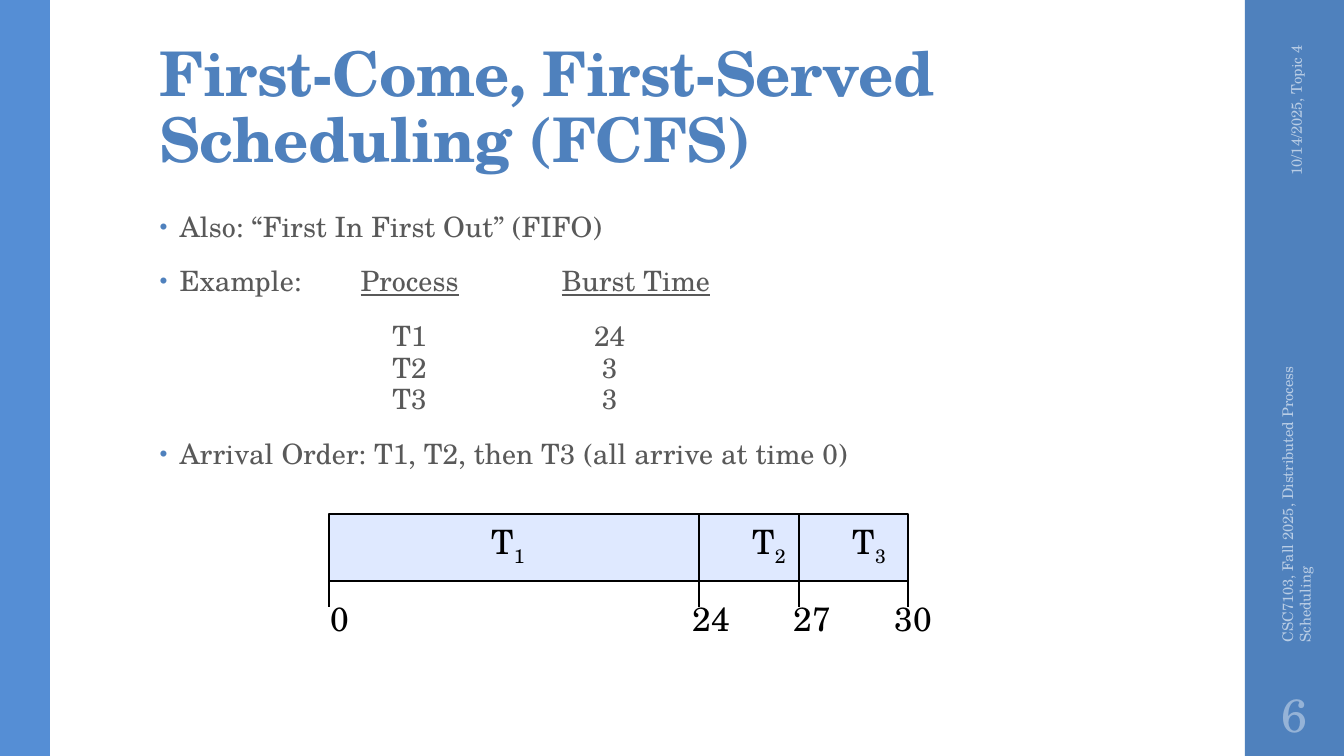
from lxml.etree import SubElement
from pptx import Presentation
from pptx.dml.color import RGBColor
from pptx.enum.shapes import MSO_CONNECTOR as Connector, MSO_SHAPE as Shape
from pptx.enum.text import MSO_ANCHOR as Anchor, PP_ALIGN as Align
from pptx.oxml import parse_xml
from pptx.oxml.ns import nsdecls, qn
from pptx.util import Pt

PX = 4578
FONT = "TeX Gyre Schola"
BLUE = "4F81BD"
BLACK = "000000"
GRAY = "595959"
PALE = "B9CDE5"


def color(value):
    return RGBColor.from_string(value)


def px(*lengths):
    return [length * PX for length in lengths]


def add_rectangle(slide, box, fill, line=None):
    shape = slide.shapes.add_shape(Shape.RECTANGLE, *px(*box))
    shape.shadow.inherit = False
    shape.fill.solid()
    shape.fill.fore_color.rgb = color(fill)
    if line:
        shape.line.color.rgb = color(line)
        shape.line.width = Pt(0.75)
    else:
        shape.line.fill.background()


def add_line(slide, x, top, bottom):
    connector = slide.shapes.add_connector(Connector.STRAIGHT, *px(x, top, x, bottom))
    connector.line.color.rgb = color(BLACK)
    connector.line.width = Pt(0.75)
    SubElement(connector._element.spPr, qn("a:effectLst"))


def add_frame(slide, box, anchor=Anchor.MIDDLE, wrap=True, rotation=0):
    shape = slide.shapes.add_textbox(*px(*box))
    shape.rotation = rotation
    frame = shape.text_frame
    frame.word_wrap = wrap
    frame.vertical_anchor = anchor
    return frame


def style(paragraph, size, ink, bold=False, align=Align.LEFT, spacing=0):
    font = paragraph.font
    font.name = FONT
    font.size = Pt(size)
    font.bold = bold
    font.color.rgb = color(ink)
    paragraph.alignment = align
    properties = paragraph._p.get_or_add_pPr().get_or_add_defRPr()
    properties.set("spc", str(spacing))


def add_text(slide, box, text, size, ink, align=Align.LEFT, **options):
    frame = add_frame(slide, box, **options)
    paragraph = frame.paragraphs[0]
    paragraph.text = text
    style(paragraph, size, ink, align=align)
    return frame


def add_before_font(paragraph, *fragments):
    font_properties = paragraph._p.pPr.find(qn("a:defRPr"))
    for tag, content in fragments:
        font_properties.addprevious(
            parse_xml(f"<a:{tag} {nsdecls('a')} {content}"))


def add_bullet(paragraph):
    properties = paragraph._p.pPr
    properties.set("marL", str(20 * PX))
    properties.set("indent", str(-20 * PX))
    add_before_font(
        paragraph,
        ("buClr", f'><a:srgbClr val="{BLUE}"/></a:buClr>'),
        ("buSzPct", 'val="80000"/>'),
        ("buFont", 'typeface="Arial"/>'),
        ("buChar", 'char="•"/>'))


def add_tabs(paragraph, kind, *positions):
    stops = "".join(f'<a:tab pos="{x * PX}" algn="{kind}"/>' for x in positions)
    add_before_font(paragraph, ("tabLst", f">{stops}</a:tabLst>"))


def add_side_bars(slide, width, height):
    add_rectangle(slide, (width - 99, 0, 99, height), BLUE)
    add_rectangle(slide, (0, 0, 50, height), "558ED5")


def add_title(slide, box):
    frame = add_frame(slide, box, anchor=Anchor.BOTTOM)
    frame.margin_top = 6 * PX
    paragraph = frame.paragraphs[0]
    paragraph.text = "First-Come, First-Served Scheduling (FCFS)"
    paragraph.line_spacing = 0.9
    style(paragraph, 22.2, BLUE, bold=True, spacing=-25)


def add_body(slide, box):
    frame = add_frame(slide, box, anchor=Anchor.TOP)
    processes = [("T1", 24), ("T2", 3), ("T3", 3)]
    rows = "\v".join(f"\t{name}\t{burst}" for name, burst in processes)
    texts = ["Also: “First In First Out” (FIFO)", "", rows,
             "Arrival Order: T1, T2, then T3 (all arrive at time 0)"]
    paragraphs = [frame.paragraphs[0]] + [frame.add_paragraph() for _ in texts[1:]]
    for paragraph, text in zip(paragraphs, texts):
        paragraph.text = text
        paragraph.line_spacing = 0.95
        paragraph.space_before = Pt(7.1)
        paragraph.space_after = Pt(1)
        style(paragraph, 10.1, GRAY, spacing=5)
        if text != rows:
            add_bullet(paragraph)

    example, table = paragraphs[1:3]
    for text, underline in [("Example:\t", False), ("Process", True),
                            ("\t", False), ("Burst Time", True)]:
        run = example.add_run()
        run.text = text
        run.font.underline = underline
    add_tabs(example, "l", 201, 402)
    add_tabs(table, "ctr", 250, 450)


def add_side_notes(slide, left):
    add_text(slide, (left - 54, 111, 210, 40), "10/14/2025, Topic 4", 5.3, PALE,
             align=Align.RIGHT, rotation=270)
    add_text(slide, (left - 145, 446, 392, 40),
             "CSC7103, Fall 2025, Distributed Process Scheduling", 5.3, PALE,
             rotation=270)
    add_text(slide, (left, 681, 99, 66), "6", 16.8, "95B3D7", align=Align.CENTER)


def add_gantt_chart(slide, box):
    left, top, width, height = box
    bottom = top + height
    add_rectangle(slide, box, "DFE9FF", BLACK)
    for number, x in enumerate((143, 404, 504), 1):
        frame = add_text(slide, (left + x, top, 76, 60), "T", 12.1, BLACK, wrap=False)
        subscript = frame.paragraphs[0].add_run()
        subscript.text = str(number)
        subscript.font._element.set("baseline", "-25000")
    ticks = [(0, 0, -18), (24, 370, -26), (27, 470, -25), (30, width, -33)]
    for time, x, shift in ticks:
        add_line(slide, left + x, bottom, bottom + 26)
        if 0 < x < width:
            add_line(slide, left + x, top, bottom)
        label_width = 78 if time else 60
        add_text(slide, (left + x + shift, bottom + 7, label_width, 60),
                 str(time), 12.1, BLACK, wrap=False)


def main():
    presentation = Presentation()
    width, height = 1344, 756
    presentation.slide_width, presentation.slide_height = px(width, height)
    slide = presentation.slides.add_slide(presentation.slide_layouts[6])
    add_side_bars(slide, width, height)
    add_title(slide, (140, 32, 1069, 154))
    add_body(slide, (140, 202, 947, 479))
    add_side_notes(slide, width - 99)
    add_gantt_chart(slide, (329, 514, 579, 67))
    presentation.save("out.pptx")


if __name__ == "__main__":
    main()
